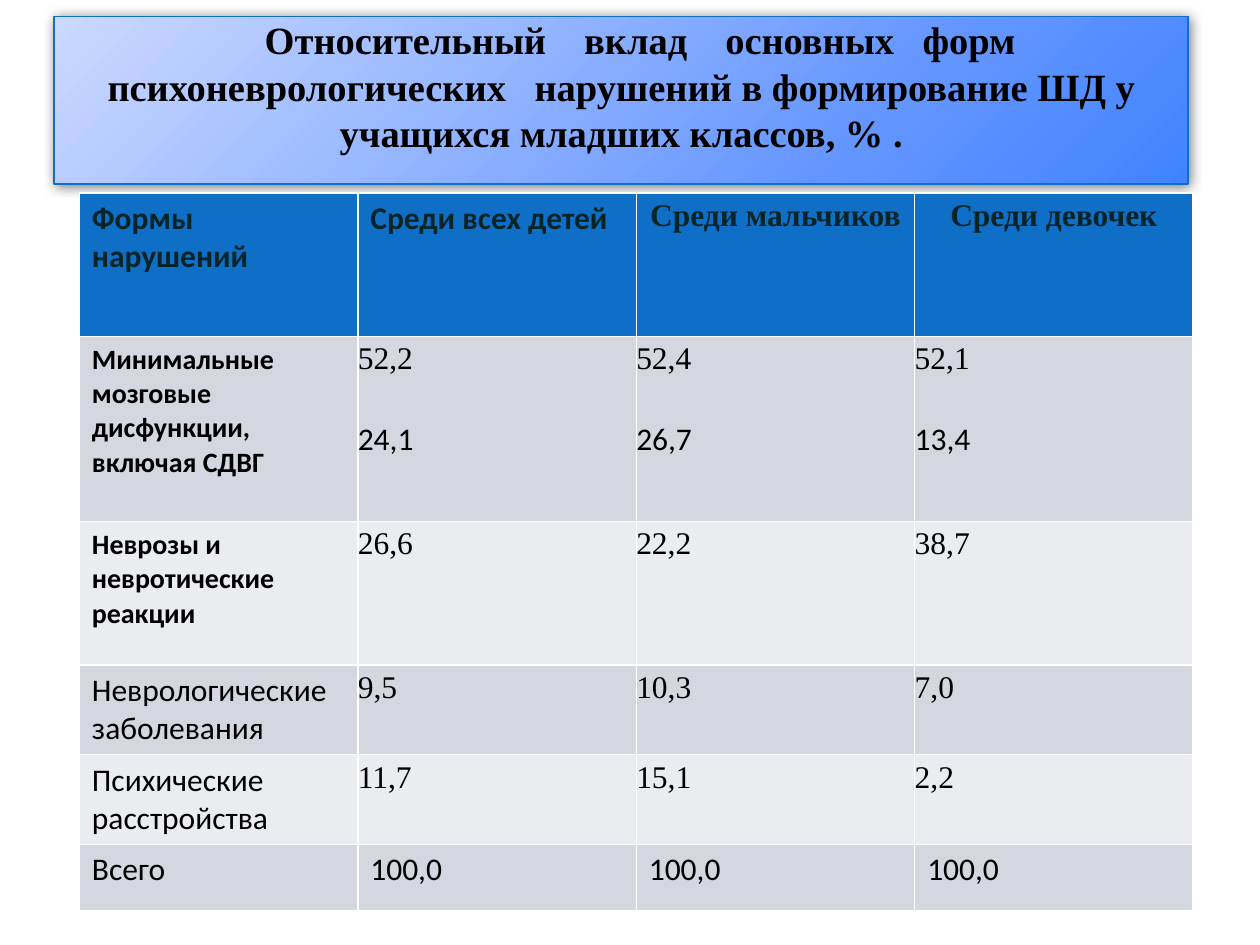
from pptx import Presentation
from pptx.dml.color import RGBColor
from pptx.enum.text import MSO_ANCHOR, MSO_AUTO_SIZE, PP_ALIGN
from pptx.oxml import parse_xml
from pptx.oxml.ns import nsdecls
from pptx.util import Inches, Pt

BLACK = RGBColor(0x00, 0x00, 0x00)
BLUE = RGBColor(0x0F, 0x6F, 0xC6)
HEADER_TEXT = RGBColor(0x07, 0x24, 0x28)
DARK_BAND = RGBColor(0xD5, 0xD7, 0xE0)
LIGHT_BAND = RGBColor(0xEB, 0xEC, 0xF0)
GRADIENT = [
    (0, RGBColor(0xCB, 0xD9, 0xFF)),
    (72, RGBColor(0x63, 0x95, 0xFF)),
    (100, RGBColor(0x41, 0x83, 0xFF)),
]
SERIF, SANS = "Times New Roman", "Calibri"

TITLE_PARTS = [
    ("Относительный", 16.2),
    ("вклад", 16.2),
    ("основных", 10.8),
    ("форм психоневрологических", 10.8),
    ("нарушений в формирование ШД у учащихся младших классов, % .", 0),
]
HEADERS = ["Формы нарушений", "Среди всех детей", "Среди мальчиков", "Среди девочек"]
DISORDERS = [
    (["Минимальные мозговые дисфункции,", "включая СДВГ"],
     [["52,2", "24,1"], ["52,4", "26,7"], ["52,1", "13,4"]]),
    (["Неврозы и невротические реакции"], [["26,6"], ["22,2"], ["38,7"]]),
    (["Неврологические заболевания"], [["9,5"], ["10,3"], ["7,0"]]),
    (["Психические расстройства"], [["11,7"], ["15,1"], ["2,2"]]),
    (["Всего"], [["100,0"]] * 3),
]
ROW_HEIGHTS = [1.14, 1.47, 1.14, 0.7, 0.7, 0.53]
COLUMN_WIDTH = 2.21


def add_run(paragraph, text, font_name, size, color=BLACK, bold=False):
    """Add one formatted run and return it."""
    run = paragraph.add_run()
    run.text = text
    run.font.name = font_name
    run.font.size = Pt(size)
    run.font.bold = bold
    run.font.color.rgb = color
    return run


def style_banner(banner):
    """Give the title its gradient, outline and soft shadow."""
    properties = banner._element.spPr
    properties.append(parse_xml(
        f'<a:prstGeom {nsdecls("a")} prst="roundRect"><a:avLst>'
        '<a:gd name="adj" fmla="val 0"/></a:avLst></a:prstGeom>'))
    stops = "".join(
        f'<a:gs pos="{position * 1000}"><a:srgbClr val="{color}"/></a:gs>'
        for position, color in GRADIENT)
    properties.append(parse_xml(
        f'<a:gradFill {nsdecls("a")} rotWithShape="1"><a:gsLst>{stops}</a:gsLst>'
        '<a:lin ang="2700000" scaled="0"/></a:gradFill>'))
    banner.line.color.rgb = BLUE
    banner.line.width = Pt(1)
    properties.append(parse_xml(
        f'<a:effectLst {nsdecls("a")}><a:outerShdw blurRad="{Pt(7.5)}" dist="0" dir="0">'
        '<a:srgbClr val="000000"><a:alpha val="55000"/></a:srgbClr>'
        '</a:outerShdw></a:effectLst>'))


def fill_title(title):
    """Place the title and write its words with widened gaps."""
    title.left, title.top = Inches(0.43), Inches(0.13)
    title.width, title.height = Inches(9), Inches(1.33)
    style_banner(title)
    frame = title.text_frame
    frame.word_wrap = True
    frame.auto_size = MSO_AUTO_SIZE.NONE
    frame.vertical_anchor = MSO_ANCHOR.TOP
    frame.margin_top = frame.margin_bottom = 0
    heading = frame.paragraphs[0]
    heading.alignment = PP_ALIGN.CENTER
    heading._p.get_or_add_pPr().set("indent", str(Inches(0.3)))
    for words, gap in TITLE_PARTS:
        add_run(heading, words, SERIF, 22, bold=True)
        if gap:
            space = add_run(heading, " ", SERIF, 22, bold=True)
            space.font._element.set("spc", str(round(gap * 100)))


def fill_cell(cell, lines, fill, fonts, size=18, color=BLACK, bold=False,
              padded=True, align=None, gap=0):
    """Write the lines of a table cell, one paragraph each."""
    cell.fill.solid()
    cell.fill.fore_color.rgb = fill
    cell.margin_left = cell.margin_right = Inches(0.1 if padded else 0)
    cell.margin_top = cell.margin_bottom = Inches(0.05 if padded else 0)
    for index, (line, font_name) in enumerate(zip(lines, fonts)):
        frame = cell.text_frame
        paragraph = frame.add_paragraph() if index else frame.paragraphs[0]
        paragraph.alignment = align
        if not padded:
            paragraph.line_spacing = 1.15
        if index and gap:
            paragraph.space_before = Pt(gap)
        add_run(paragraph, line, font_name, size, color, bold)


def add_disorder_table(slide):
    """Add the table of disorder shares by group of children."""
    table = slide.shapes.add_table(
        len(ROW_HEIGHTS), len(HEADERS), Inches(0.63), Inches(1.53),
        Inches(COLUMN_WIDTH * len(HEADERS)), Inches(sum(ROW_HEIGHTS))).table
    for column in table.columns:
        column.width = Inches(COLUMN_WIDTH)
    for row, height in zip(table.rows, ROW_HEIGHTS):
        row.height = Inches(height)
    for index, header in enumerate(HEADERS):
        padded = index < 2
        fill_cell(table.cell(0, index), [header], BLUE, [SANS if padded else SERIF],
                  color=HEADER_TEXT, bold=True, padded=padded,
                  align=None if padded else PP_ALIGN.CENTER)
    for row, (label, shares) in enumerate(DISORDERS, start=1):
        fill = DARK_BAND if row % 2 else LIGHT_BAND
        major = row <= 2
        total = row == len(DISORDERS)
        fill_cell(table.cell(row, 0), label, fill, [SANS, SANS],
                  size=16 if major else 18, bold=major)
        for column, values in enumerate(shares, start=1):
            fill_cell(table.cell(row, column), values, fill,
                      [SANS if total else SERIF, SANS], padded=total, gap=22)


def main():
    """Build the slide and save it."""
    presentation = Presentation()
    presentation.slide_width, presentation.slide_height = Inches(10), Inches(7.5)
    slide = presentation.slides.add_slide(presentation.slide_layouts[5])
    fill_title(slide.shapes.title)
    add_disorder_table(slide)
    presentation.save("out.pptx")


if __name__ == "__main__":
    main()
